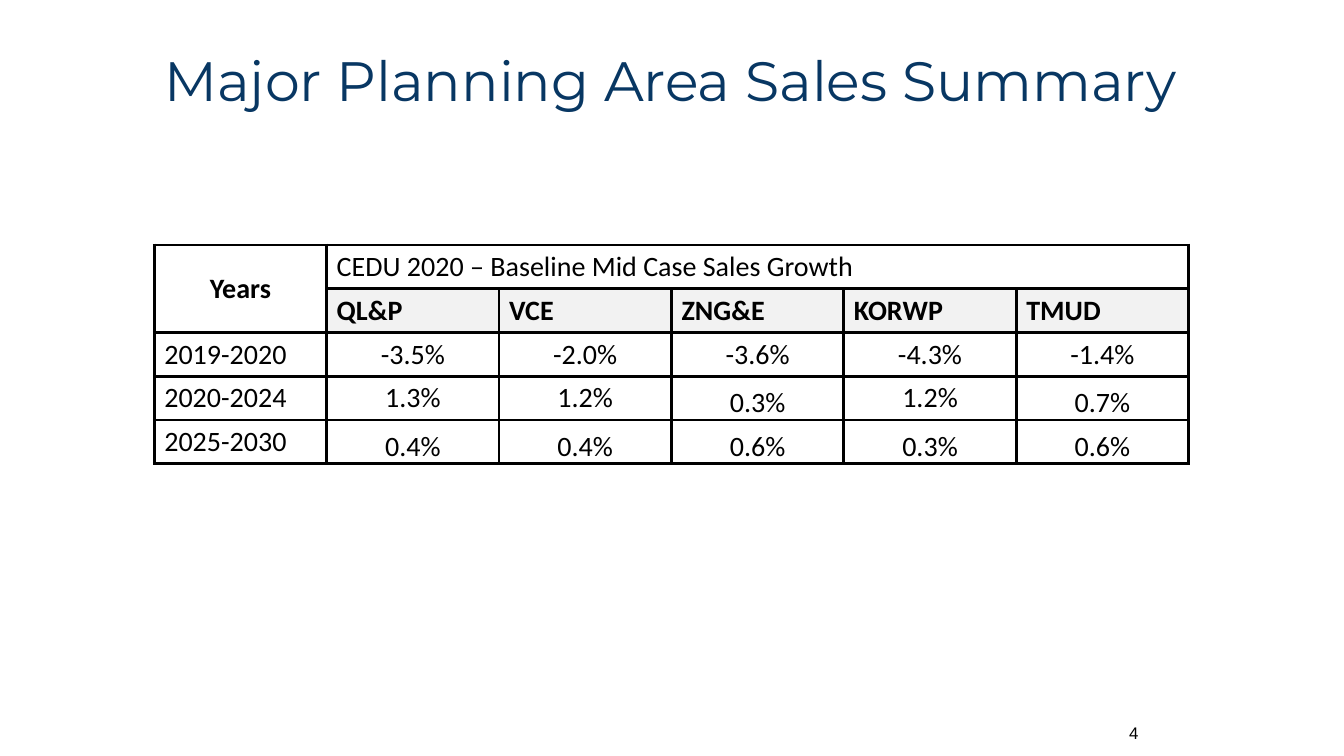
from dataclasses import dataclass

from lxml import etree
from pptx import Presentation
from pptx.dml.color import RGBColor
from pptx.enum.text import MSO_ANCHOR, PP_ALIGN
from pptx.oxml.ns import qn
from pptx.util import Inches, Pt

LEFT, CENTER, RIGHT = PP_ALIGN.LEFT, PP_ALIGN.CENTER, PP_ALIGN.RIGHT
TOP, MIDDLE, BOTTOM = MSO_ANCHOR.TOP, MSO_ANCHOR.MIDDLE, MSO_ANCHOR.BOTTOM

AREAS = ["QL&P", "VCE", "ZNG&E", "KORWP", "TMUD"]
GROWTH = [
    ("2019-2020", ["-3.5%", "-2.0%", "-3.6%", "-4.3%", "-1.4%"]),
    ("2020-2024", ["1.3%", "1.2%", "0.3%", "1.2%", "0.7%"]),
    ("2025-2030", ["0.4%", "0.4%", "0.6%", "0.3%", "0.6%"]),
]
# Growth columns whose cells have almost no margin, by period
TIGHT = {"2020-2024": {3, 5}, "2025-2030": {1, 2, 3, 4, 5}}


@dataclass(frozen=True)
class Theme:
    navy: str = "083763"
    black: str = "000000"
    white: str = "FFFFFF"
    gray: str = "F2F2F2"
    title_font: str = "Montserrat"
    table_font: str = "Calibri"
    number_font: str = "Arial"
    title_size: float = 39.6
    table_size: float = 20
    number_size: float = 12
    border: float = 2.25


class SlideBuilder:
    def __init__(self, prs, theme):
        self.theme = theme
        self.s = prs.slides.add_slide(prs.slide_layouts[6])

    def set_text(self, tf, text, font, size, color, align, bold=False):
        tf.text = text
        p = tf.paragraphs[0]
        p.alignment = align
        r = p.runs[0]
        r.font.name = font
        r.font.size = Pt(size)
        r.font.bold = bold
        r.font.color.rgb = RGBColor.from_string(color)
        return p

    def text(self, x, y, w, h, text, font, size, color, align=LEFT):
        sp = self.s.shapes.add_textbox(Inches(x), Inches(y), Inches(w), Inches(h))
        tf = sp.text_frame
        tf.word_wrap = True
        tf.vertical_anchor = MIDDLE
        return self.set_text(tf, text, font, size, color, align)

    def table(self, x, y, rows, cols, col_w, row_h):
        """Add a plain table with every cell bordered and filled white."""
        frame = self.s.shapes.add_table(
            rows, cols, Inches(x), Inches(y),
            Inches(col_w * cols), Inches(row_h * rows))
        table = frame.table
        table.first_row = table.horz_banding = False
        for cell in table.iter_cells():
            self.border(cell)
            self.fill(cell, self.theme.white)
        return table

    def border(self, cell):
        tc_pr = cell._tc.get_or_add_tcPr()
        for side in ("a:lnL", "a:lnR", "a:lnT", "a:lnB"):
            ln = etree.SubElement(tc_pr, qn(side), w=str(Pt(self.theme.border)))
            fill = etree.SubElement(ln, qn("a:solidFill"))
            etree.SubElement(fill, qn("a:srgbClr"), val=self.theme.black)

    def fill(self, cell, color):
        cell.fill.solid()
        cell.fill.fore_color.rgb = RGBColor.from_string(color)

    def cell(self, cell, text, align=LEFT, anchor=TOP, bold=False):
        t = self.theme
        cell.vertical_anchor = anchor
        self.set_text(cell.text_frame, text, t.table_font, t.table_size,
                      t.black, align, bold)

    def tighten(self, cell):
        cell.margin_left = cell.margin_right = cell.margin_top = Inches(0.01)
        cell.margin_bottom = 0


def add_growth_table(slide):
    table = slide.table(1.53, 2.43, len(GROWTH) + 2, len(AREAS) + 1, 1.71, 0.41)
    table.cell(0, 0).merge(table.cell(1, 0))
    table.cell(0, 1).merge(table.cell(0, len(AREAS)))
    slide.cell(table.cell(0, 0), "Years", CENTER, MIDDLE, bold=True)
    slide.cell(table.cell(0, 1), "CEDU 2020 – Baseline Mid Case Sales Growth")

    for col, area in enumerate(AREAS, 1):
        slide.cell(table.cell(1, col), area, bold=True)
        slide.fill(table.cell(1, col), slide.theme.gray)

    for row, (period, rates) in enumerate(GROWTH, 2):
        slide.cell(table.cell(row, 0), period)
        for col, rate in enumerate(rates, 1):
            cell = table.cell(row, col)
            slide.cell(cell, rate, CENTER, BOTTOM)
            if col in TIGHT.get(period, ()):
                slide.tighten(cell)


def main():
    prs = Presentation()
    prs.slide_width, prs.slide_height = Inches(13.33), Inches(7.5)
    theme = Theme()
    slide = SlideBuilder(prs, theme)

    title = slide.text(1.53, 0.26, 11.4, 1.14, "Major Planning Area Sales Summary",
                       theme.title_font, theme.title_size, theme.navy)
    title.line_spacing = 0.9
    slide.text(9.42, 7.07, 1.97, 0.4, "4", theme.number_font,
               theme.number_size, theme.black, RIGHT)
    add_growth_table(slide)

    prs.save("out.pptx")


if __name__ == "__main__":
    main()
